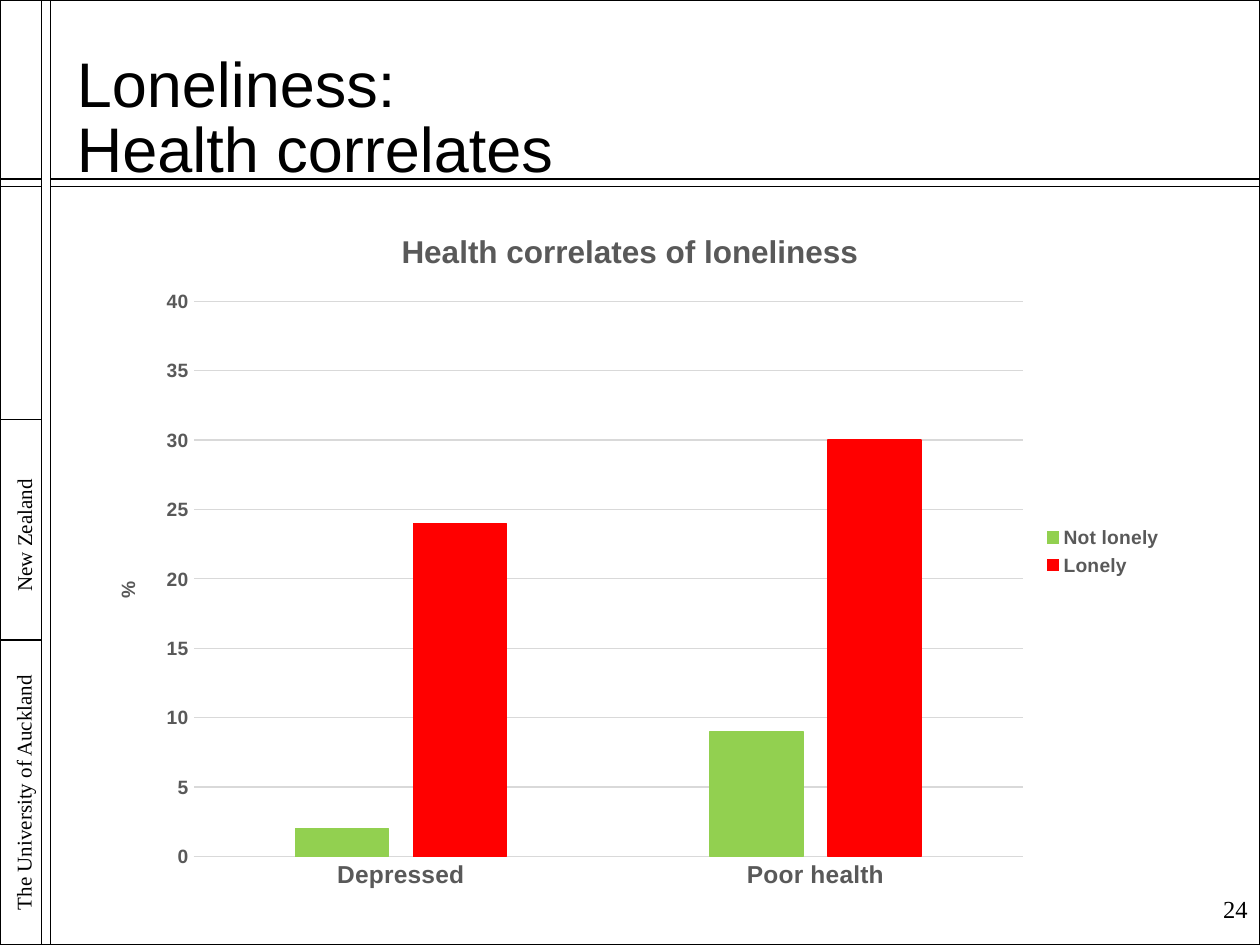
from pptx import Presentation
from pptx.chart.data import CategoryChartData
from pptx.dml.color import RGBColor
from pptx.enum.chart import XL_CHART_TYPE as ChartType, XL_LEGEND_POSITION as LegendPosition, XL_TICK_MARK as TickMark
from pptx.enum.shapes import MSO_CONNECTOR as Connector, MSO_SHAPE as Shape
from pptx.enum.text import MSO_ANCHOR as Anchor, MSO_AUTO_SIZE as AutoSize, PP_ALIGN as Align
from pptx.oxml import parse_xml
from pptx.oxml.ns import nsdecls, qn
from pptx.util import Inches, Pt

COLORS = {"ink": "000000", "label": "595959", "grid": "D9D9D9",
          "Not lonely": "92D050", "Lonely": "FF0000"}
SANS, SERIF = "Arial", "Times New Roman"


def rgb(name):
    """Return the named colour."""
    return RGBColor.from_string(COLORS[name])


def style_font(font, face, size, color="ink", bold=False):
    """Set face, size, colour and weight of a font."""
    font.name, font.size, font.bold = face, Pt(size), bold
    font.color.rgb = rgb(color)


def style_line(line, color, width=0.75):
    """Set colour and width of a line."""
    line.color.rgb, line.width = rgb(color), Pt(width)


def add_rule(slide, start, end, width):
    """Draw a straight black rule between two points in inches."""
    rule = slide.shapes.add_connector(Connector.STRAIGHT, *map(Inches, start + end))
    style_line(rule.line, "ink", width)
    rule._element.spPr.append(parse_xml(f"<a:effectLst {nsdecls('a')}/>"))


def add_label(slide, box, text, size, align, anchor=Anchor.TOP, rotation=0):
    """Place one line of serif text in a box."""
    label = slide.shapes.add_textbox(*map(Inches, box))
    label.rotation = rotation
    frame = label.text_frame
    frame.word_wrap, frame.vertical_anchor = True, anchor
    paragraph = frame.paragraphs[0]
    paragraph.alignment = align
    run = paragraph.add_run()
    run.text = text
    style_font(run.font, SERIF, size)


def add_frame(slide, box):
    """Draw the border, the double rules and the sidebar names."""
    left, top, width, height = box
    right, bottom = left + width, top + height
    inner, outer = left + 0.33, left + 0.4
    border = slide.shapes.add_shape(Shape.RECTANGLE, *map(Inches, box))
    border.shadow.inherit = False
    border.fill.background()
    style_line(border.line, "ink")
    for x in (inner, outer):
        add_rule(slide, (x, top), (x, bottom), 0.75)
    for y in (1.42, 1.48):
        add_rule(slide, (outer, top + y), (right, top + y), 0.75)
    for y in (1.42, 1.48, 3.33, 5.08):
        add_rule(slide, (left, top + y), (inner, top + y), 1)
    add_label(slide, (left - 0.92, top + 6.12, 2.25, 0.34),
              "The University of Auckland", 12, Align.CENTER, rotation=270)
    add_label(slide, (left - 0.53, top + 4.07, 1.5, 0.36),
              "New Zealand", 12, Align.CENTER, rotation=270)


def add_title(slide, box):
    """Fill the title placeholder with its two lines."""
    title = slide.shapes.title
    title.left, title.top, title.width, title.height = map(Inches, box)
    frame = title.text_frame
    frame.auto_size, frame.word_wrap = AutoSize.NONE, True
    frame.vertical_anchor = Anchor.TOP
    frame.margin_top, frame.margin_bottom = Inches(0.08), 0
    paragraph = frame.paragraphs[0]
    paragraph.alignment, paragraph.line_spacing = Align.LEFT, 0.86
    for index, text in enumerate(("Loneliness:", "Health correlates")):
        if index:
            paragraph.add_line_break()
        run = paragraph.add_run()
        run.text = text
        style_font(run.font, SANS, 36)


def write_heading(frame, text, size):
    """Write a chart or axis heading."""
    run = frame.paragraphs[0].add_run()
    run.text = text
    style_font(run.font, SANS, size, "label", True)


def place_plot(chart, x, y, w, h):
    """Fix the inner plot area as fractions of the chart."""
    area = chart._chartSpace.chart.plotArea
    for old in area.findall(qn("c:layout")):
        area.remove(old)
    sizes = "".join(f'<c:{key} val="{value}"/>'
                    for key, value in zip("xywh", (x, y, w, h)))
    area.insert(0, parse_xml(
        f'<c:layout {nsdecls("c")}><c:manualLayout><c:layoutTarget val="inner"/>'
        f'<c:xMode val="edge"/><c:yMode val="edge"/>{sizes}</c:manualLayout></c:layout>'))


def add_health_chart(slide, box):
    """Chart depression and poor health by loneliness."""
    data = CategoryChartData()
    data.categories = ["Depressed", "Poor health"]
    data.add_series("Not lonely", (2, 9))
    data.add_series("Lonely", (24, 30))
    chart = slide.shapes.add_chart(
        ChartType.COLUMN_CLUSTERED, *map(Inches, box), data).chart
    style_font(chart.font, SANS, 10)
    chart.has_title = True
    write_heading(chart.chart_title.text_frame, "Health correlates of loneliness", 18)

    plot = chart.plots[0]
    plot.gap_width, plot.overlap, plot.vary_by_categories = 219, -27, False
    for series in plot.series:
        series.format.fill.solid()
        series.format.fill.fore_color.rgb = rgb(series.name)
        style_line(series.format.line, series.name)

    outcomes, percent = chart.category_axis, chart.value_axis
    for axis, size in ((outcomes, 14), (percent, 11)):
        axis.major_tick_mark = axis.minor_tick_mark = TickMark.NONE
        style_font(axis.tick_labels.font, SANS, size, "label", True)
    style_line(outcomes.format.line, "grid")
    percent.format.line.fill.background()
    percent.minimum_scale, percent.maximum_scale, percent.major_unit = 0, 40, 5
    style_line(percent.major_gridlines.format.line, "grid")
    write_heading(percent.axis_title.text_frame, "%", 11)

    chart.has_legend = True
    chart.legend.position = LegendPosition.RIGHT
    chart.legend.include_in_layout = False
    style_font(chart.legend.font, SANS, 11, "label", True)
    place_plot(chart, 0.1, 0.14, 0.76, 0.8)


def main():
    """Build and save the slide."""
    deck = Presentation()
    deck.slide_width, deck.slide_height = Inches(10), Inches(7.5)
    slide = deck.slides.add_slide(deck.slide_layouts[5])
    add_frame(slide, (0, 0, 10, 7.5))
    add_title(slide, (0.51, 0.36, 6.07, 0.98))
    add_label(slide, (9.53, 6.96, 0.47, 0.5), "24", 14, Align.RIGHT, Anchor.MIDDLE)
    add_health_chart(slide, (0.67, 1.62, 8.66, 5.51))
    deck.save("out.pptx")


if __name__ == "__main__":
    main()
